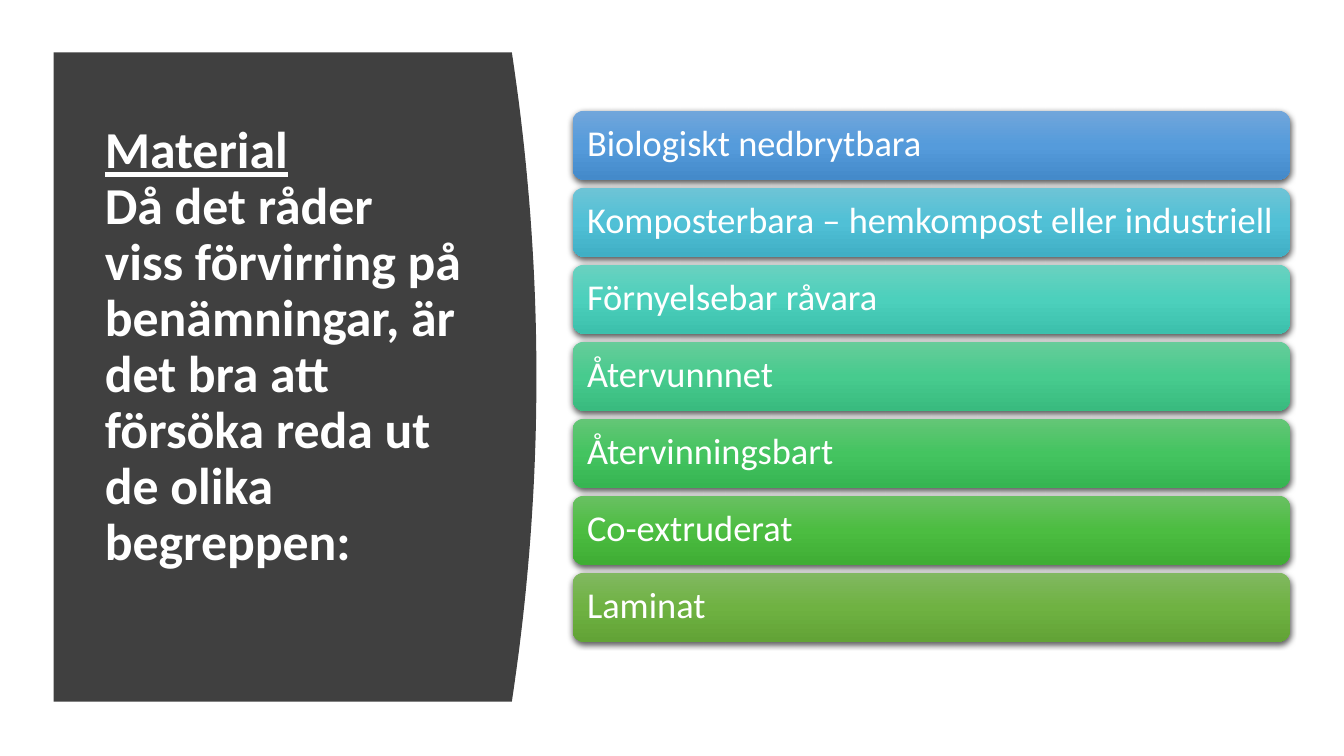
from dataclasses import dataclass

from lxml.etree import SubElement
from pptx import Presentation
from pptx.dml.color import RGBColor
from pptx.enum.shapes import MSO_SHAPE
from pptx.enum.text import MSO_ANCHOR, MSO_AUTO_SIZE, PP_ALIGN
from pptx.oxml import parse_xml
from pptx.oxml.ns import nsdecls, qn
from pptx.shapes.autoshape import Shape
from pptx.slide import Slide
from pptx.text.text import _Paragraph as Para
from pptx.util import Cm, Pt


@dataclass(frozen=True)
class Theme:
    font: str = "Calibri"
    white: RGBColor = RGBColor(0xFF, 0xFF, 0xFF)
    panel: RGBColor = RGBColor(0x40, 0x40, 0x40)
    shadow: str = "000000"
    title: Pt = Pt(37)
    label: Pt = Pt(26)


@dataclass(frozen=True)
class Term:
    text: str
    top: str
    mid: str
    low: str


THEME = Theme()

TERMS = [
    Term("Biologiskt nedbrytbara", "71A6DB", "559BDB", "448ACA"),
    Term("Komposterbara – hemkompost eller industriell",
         "6EC4D6", "50C0D6", "40AFC5"),
    Term("Förnyelsebar råvara", "6AD1C0", "4CD0BC", "3CC0AC"),
    Term("Återvunnnet", "67CC9A", "47CB8E", "39BB7F"),
    Term("Återvinningsbart", "64C677", "44C460", "36B552"),
    Term("Co-extruderat", "69C062", "4CBD41", "3FAD34"),
    Term("Laminat", "81B861", "6FB242", "62A336"),
]


def style(para: Para, size: Pt, bold: bool = False) -> None:
    para.alignment = PP_ALIGN.LEFT
    para.line_spacing = 0.9
    font = para.font
    font.name, font.size, font.bold = THEME.font, size, bold
    font.color.rgb = THEME.white


def add_panel(slide: Slide) -> Shape:
    """Draw the dark panel, whose right side bulges as a parabola."""
    left, top, high = 1.35, 1.32, 16.36
    side, bulge, steps = 12.9, 0.62, 40
    edge = []
    for step in range(steps + 1):
        part = step / steps
        reach = bulge * (1 - (2 * part - 1) ** 2)
        edge.append((Cm(side + reach), Cm(top + high * part)))
    pen = slide.shapes.build_freeform(Cm(left), Cm(top))
    pen.add_line_segments(edge + [(Cm(left), Cm(top + high))], close=True)
    panel = pen.convert_to_shape()
    panel.shadow.inherit = False
    panel.fill.solid()
    panel.fill.fore_color.rgb = THEME.panel
    panel.line.fill.background()
    return panel


def set_title(slide: Slide) -> None:
    title = slide.shapes.title
    title.left, title.top = Cm(2.39), Cm(2.82)
    title.width, title.height = Cm(9.5), Cm(13.31)
    frame = title.text_frame
    frame.word_wrap = True
    frame.auto_size = MSO_AUTO_SIZE.NONE
    frame.vertical_anchor = MSO_ANCHOR.MIDDLE
    frame.margin_bottom = Cm(1.55)
    para = frame.paragraphs[0]
    style(para, THEME.title, bold=True)
    head = para.add_run()
    head.text = "Material"
    head.font.underline = True
    para.add_line_break()
    para.add_run().text = (
        "Då det råder viss förvirring på benämningar, "
        "är det bra att försöka reda ut de olika begreppen:")


def shade(bar: Shape, term: Term) -> None:
    """Give a bar its three-stop gradient and soft shadow."""
    bar.line.fill.background()
    bar.shadow.inherit = False
    props = bar.element.spPr
    stops = "".join(
        f'<a:gs pos="{pos}"><a:srgbClr val="{tone}"/></a:gs>'
        for pos, tone in ((0, term.top), (50000, term.mid), (100000, term.low)))
    props.find(qn("a:ln")).addprevious(parse_xml(
        f'<a:gradFill {nsdecls("a")} rotWithShape="1"><a:gsLst>{stops}</a:gsLst>'
        '<a:lin ang="5400000" scaled="0"/></a:gradFill>'))
    cast = SubElement(
        props.find(qn("a:effectLst")), qn("a:outerShdw"),
        blurRad=str(Pt(4.5)), dist=str(Pt(1.5)), dir="5400000",
        algn="ctr", rotWithShape="0")
    tone = SubElement(cast, qn("a:srgbClr"), val=THEME.shadow)
    SubElement(tone, qn("a:alpha"), val="63000")


def add_bar(slide: Slide, term: Term, top: float) -> None:
    bar = slide.shapes.add_shape(
        MSO_SHAPE.ROUNDED_RECTANGLE, Cm(14.43), Cm(top), Cm(18.08), Cm(1.74))
    shade(bar, term)
    frame = bar.text_frame
    frame.word_wrap = True
    frame.vertical_anchor = MSO_ANCHOR.MIDDLE
    frame.margin_left = Cm(0.28)
    frame.margin_right = Cm(0.2)
    para = frame.paragraphs[0]
    para.text = term.text
    style(para, THEME.label)


def main() -> None:
    deck = Presentation()
    deck.slide_width, deck.slide_height = Cm(33.87), Cm(19.05)
    slide = deck.slides.add_slide(deck.slide_layouts[5])
    set_title(slide)
    panel = add_panel(slide)
    slide.shapes.title.element.addprevious(panel.element)
    first, pitch = 2.79, 1.94
    for row, term in enumerate(TERMS):
        add_bar(slide, term, first + row * pitch)
    deck.save("out.pptx")


if __name__ == "__main__":
    main()
